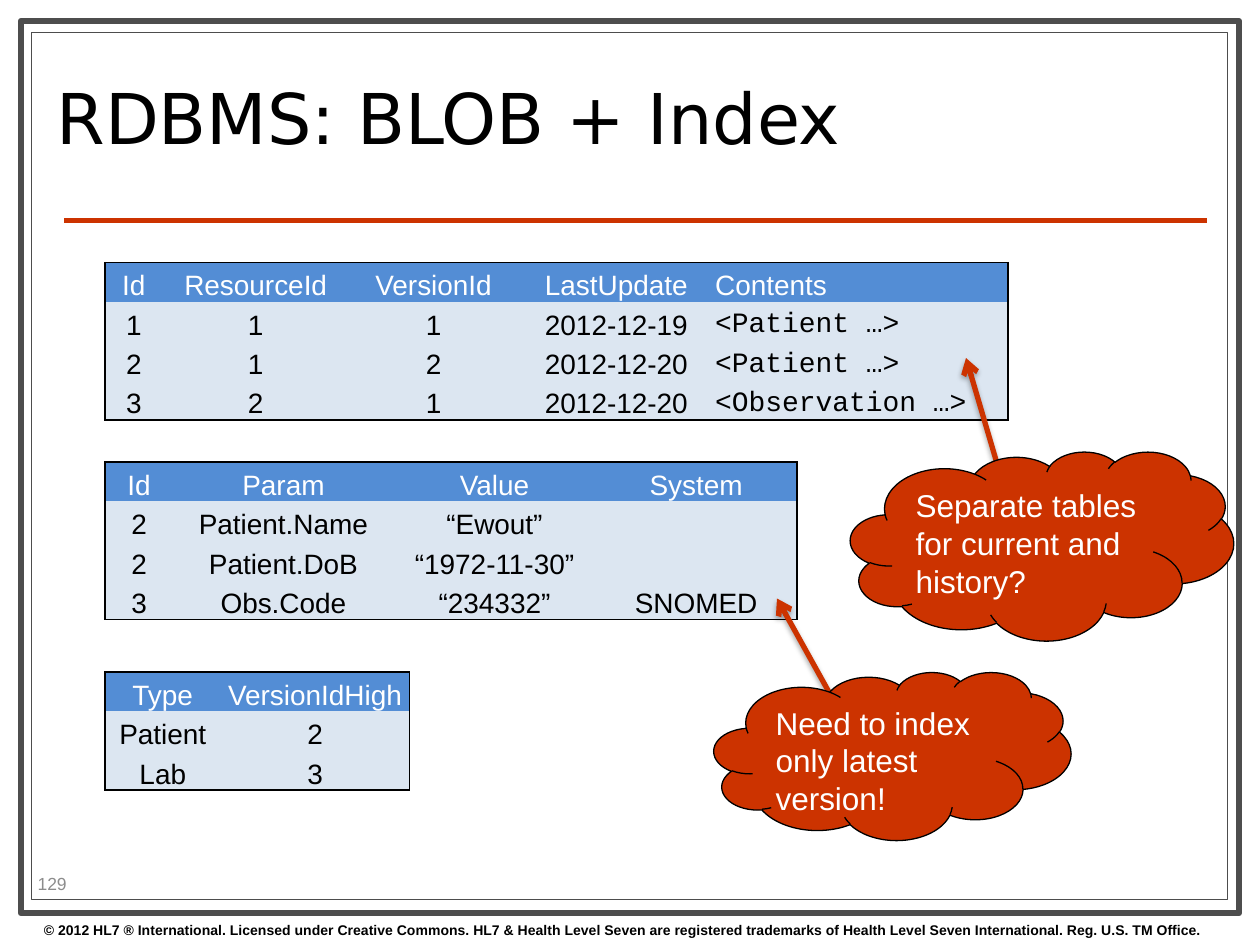
import pptx
import pptx.dml.color
import pptx.enum.shapes
import pptx.enum.text
import pptx.oxml
import pptx.oxml.ns
import pptx.util

HUES = {
    "ink": "000000", "paper": "FFFFFF", "frame": "4D4D4D", "accent": "CC3300",
    "head": "538DD5", "body": "DCE6F1", "mute": "8C8C8C",
}
KINDS = pptx.enum.shapes.MSO_SHAPE
ANCHOR = pptx.enum.text.MSO_ANCHOR
ALIGN = pptx.enum.text.PP_ALIGN
NS = pptx.oxml.ns.nsdecls("a")
COLS, ROWS = 120, 90
ROW = 3.75  # table row height in grid rows


def apply(item, values):
    for name, value in values.items():
        setattr(item, name, value)


class Deck:
    """Style and current slide; lengths are columns and rows of the grid."""

    font = "Arial"

    def __init__(self):
        self.show = pptx.Presentation()
        apply(self.show, {"slide_width": pptx.util.Inches(10),
                          "slide_height": pptx.util.Inches(7.5)})
        self.slide = self.show.slides.add_slide(self.show.slide_layouts[6])
        self.shapes = self.slide.shapes

    def grid(self, *spans):
        units = (self.show.slide_width / COLS, self.show.slide_height / ROWS)
        return [round(span * units[i % 2]) for i, span in enumerate(spans)]

    def hue(self, name):
        return pptx.dml.color.RGBColor.from_string(HUES[name])

    def paint(self, fill, name):
        fill.solid()
        fill.fore_color.rgb = self.hue(name)

    def stroke(self, line, name, width):
        self.paint(line.fill, name)
        line.width = pptx.util.Pt(width)

    def label(self, frame, words, size, hue="ink", font=None, bold=False,
              align=ALIGN.LEFT, space=None):
        para = frame.paragraphs[0]
        apply(para, {"alignment": align, "line_spacing": space})
        run = para.add_run()
        run.text = words
        apply(run.font, {"name": font or self.font, "bold": bold,
                         "size": pptx.util.Pt(size)})
        run.font.color.rgb = self.hue(hue)

    def text(self, box, words, size, anchor=ANCHOR.MIDDLE, **style):
        frame = self.shapes.add_textbox(*self.grid(*box)).text_frame
        apply(frame, {"word_wrap": True, "vertical_anchor": anchor})
        self.label(frame, words, size, **style)

    def shape(self, kind, box, fill, line, width):
        shape = self.shapes.add_shape(kind, *self.grid(*box))
        shape.shadow.inherit = False
        self.paint(shape.fill, fill)
        self.stroke(shape.line, line, width)
        return shape

    def cloud(self, box, words):
        shape = self.shape(KINDS.CLOUD, box, "accent", "ink", 0.75)
        apply(shape.text_frame, {"word_wrap": True,
                                 "vertical_anchor": ANCHOR.TOP})
        self.label(shape.text_frame, words, 18, "paper")

    def line(self, start, end, arrow=False):
        line = self.shapes.add_connector(
            pptx.enum.shapes.MSO_CONNECTOR.STRAIGHT, *self.grid(*start, *end))
        self.stroke(line.line, "accent", 3)
        shade = ""
        if arrow:
            line.line.fill._xPr.append(
                pptx.oxml.parse_xml(f'<a:tailEnd {NS} type="arrow"/>'))
            shade = ('<a:outerShdw blurRad="39370" dist="22860" dir="5400000" '
                     f'rotWithShape="0"><a:srgbClr val="{HUES["ink"]}">'
                     '<a:alpha val="35000"/></a:srgbClr></a:outerShdw>')
        line._element.spPr.append(pptx.oxml.parse_xml(
            f"<a:effectLst {NS}>{shade}</a:effectLst>"))

    def edge(self, cell, sides):
        props = cell._tc.get_or_add_tcPr()
        for side, shown in sides.items():
            fill = (f'<a:solidFill><a:srgbClr val="{HUES["ink"]}"/></a:solidFill>'
                    if shown else "<a:noFill/>")
            props.append(pptx.oxml.parse_xml(
                f'<a:ln{side} {NS} w="12700">{fill}</a:ln{side}>'))

    def table(self, top, widths, rows, code=None):
        """Outlined table; the column numbered code is left aligned code."""
        box = self.grid(10, top, sum(widths), ROW * len(rows))
        table = self.shapes.add_table(len(rows), len(widths), *box).table
        apply(table, {"first_row": False, "horz_banding": False})
        for col, width in zip(table.columns, widths):
            col.width = self.grid(width)[0]
        for r, row in enumerate(rows):
            table.rows[r].height = self.grid(0, ROW)[1]
            for c, words in enumerate(row):
                cell = table.cell(r, c)
                inset = pptx.util.Inches(0.01)
                apply(cell, {"margin_left": inset, "margin_right": inset,
                             "margin_top": inset, "margin_bottom": 0,
                             "vertical_anchor": ANCHOR.BOTTOM})
                self.edge(cell, {"L": c == 0, "R": c == len(widths) - 1,
                                 "T": r == 0, "B": r == len(rows) - 1})
                self.paint(cell.fill, "body" if r else "head")
                if words:
                    self.label(
                        cell.text_frame, words, 16, "ink" if r else "paper",
                        font="Courier New" if r and c == code else None,
                        align=ALIGN.LEFT if c == code else ALIGN.CENTER)


def main():
    deck = Deck()

    # Double frame, title rule and footer
    deck.shape(KINDS.RECTANGLE, (2, 2, 116, 85), "paper", "frame", 3.5)
    deck.shape(KINDS.RECTANGLE, (3, 3.1, 113.9, 82.6), "paper", "frame", 0.75)
    deck.line((6.1, 21), (115, 21))
    deck.text((3, 87.2, 120, 2.8),
              "© 2012 HL7 ® International. Licensed under Creative Commons. "
              "HL7 & Health Level Seven are registered trademarks of "
              "Health Level Seven International. Reg. U.S. TM Office.",
              8, anchor=ANCHOR.TOP, bold=True)

    # Title and page number
    deck.text((4.2, 4.3, 86, 15.1), "RDBMS: BLOB + Index", 40,
              font="DejaVu Sans", space=0.8)
    deck.text((2.4, 82.7, 9.5, 2.9), "129", 10, hue="mute")

    # Resource, index and version tables
    deck.table(25, (5.5, 17.7, 16.2, 18.6, 28), [
        ("Id", "ResourceId", "VersionId", "LastUpdate", "Contents"),
        ("1", "1", "1", "2012-12-19", "<Patient …>"),
        ("2", "1", "2", "2012-12-20", "<Patient …>"),
        ("3", "2", "1", "2012-12-20", "<Observation …>"),
    ], code=4)
    deck.table(44, (6.5, 21, 19.2, 19.2), [
        ("Id", "Param", "Value", "System"),
        ("2", "Patient.Name", "“Ewout”", ""),
        ("2", "Patient.DoB", "“1972-11-30”", ""),
        ("3", "Obs.Code", "“234332”", "SNOMED"),
    ])
    deck.table(64, (11, 18), [
        ("Type", "VersionIdHigh"),
        ("Patient", "2"),
        ("Lab", "3"),
    ])

    # Remarks pointing at the tables
    deck.line((79, 66), (74, 57), arrow=True)
    deck.cloud((68, 64, 34, 16), "Need to index only latest version!")
    deck.line((95.5, 46), (92, 34.1), arrow=True)
    deck.cloud((81, 43, 36.5, 18), "Separate tables for current and history?")

    deck.show.save("out.pptx")


if __name__ == "__main__":
    main()
